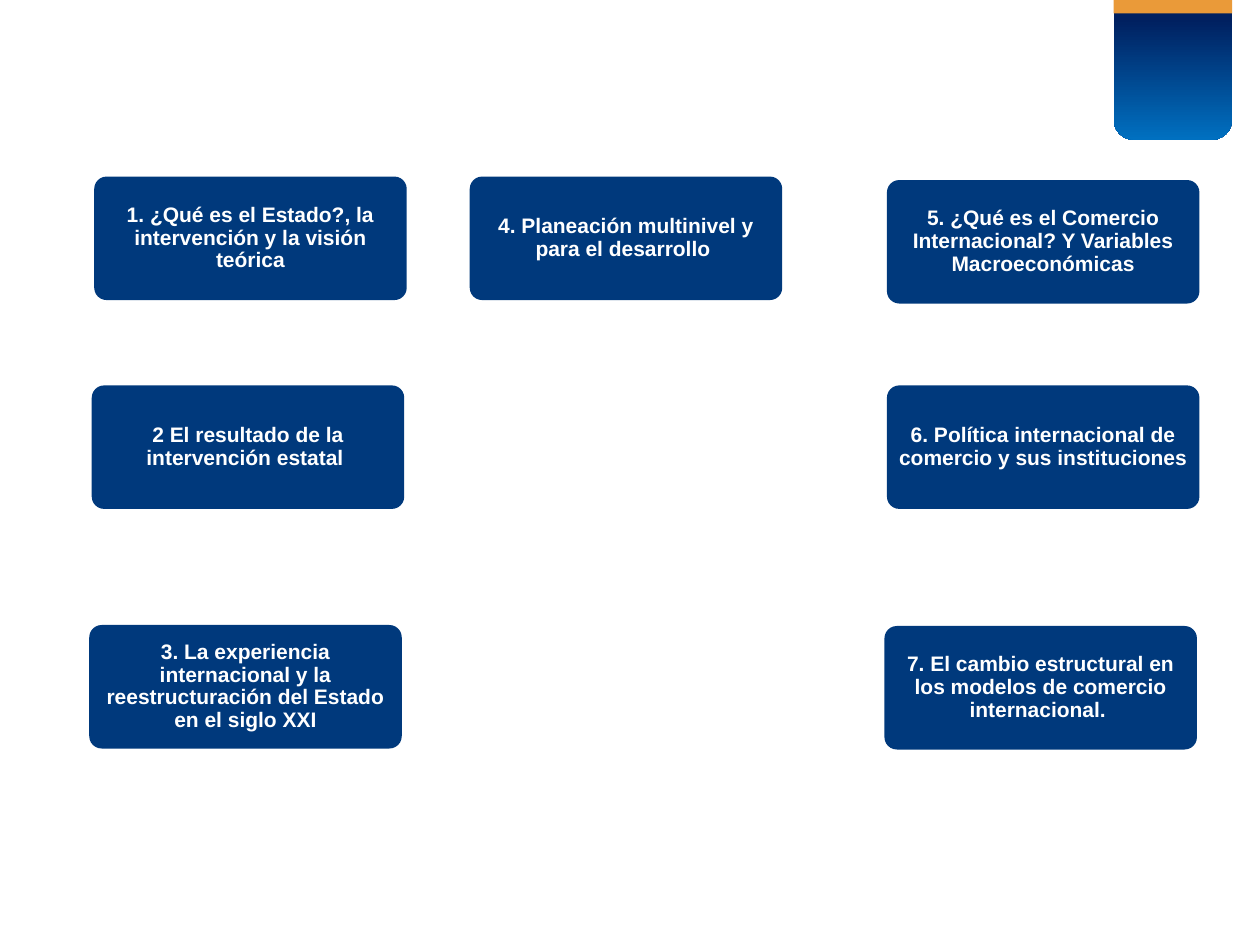
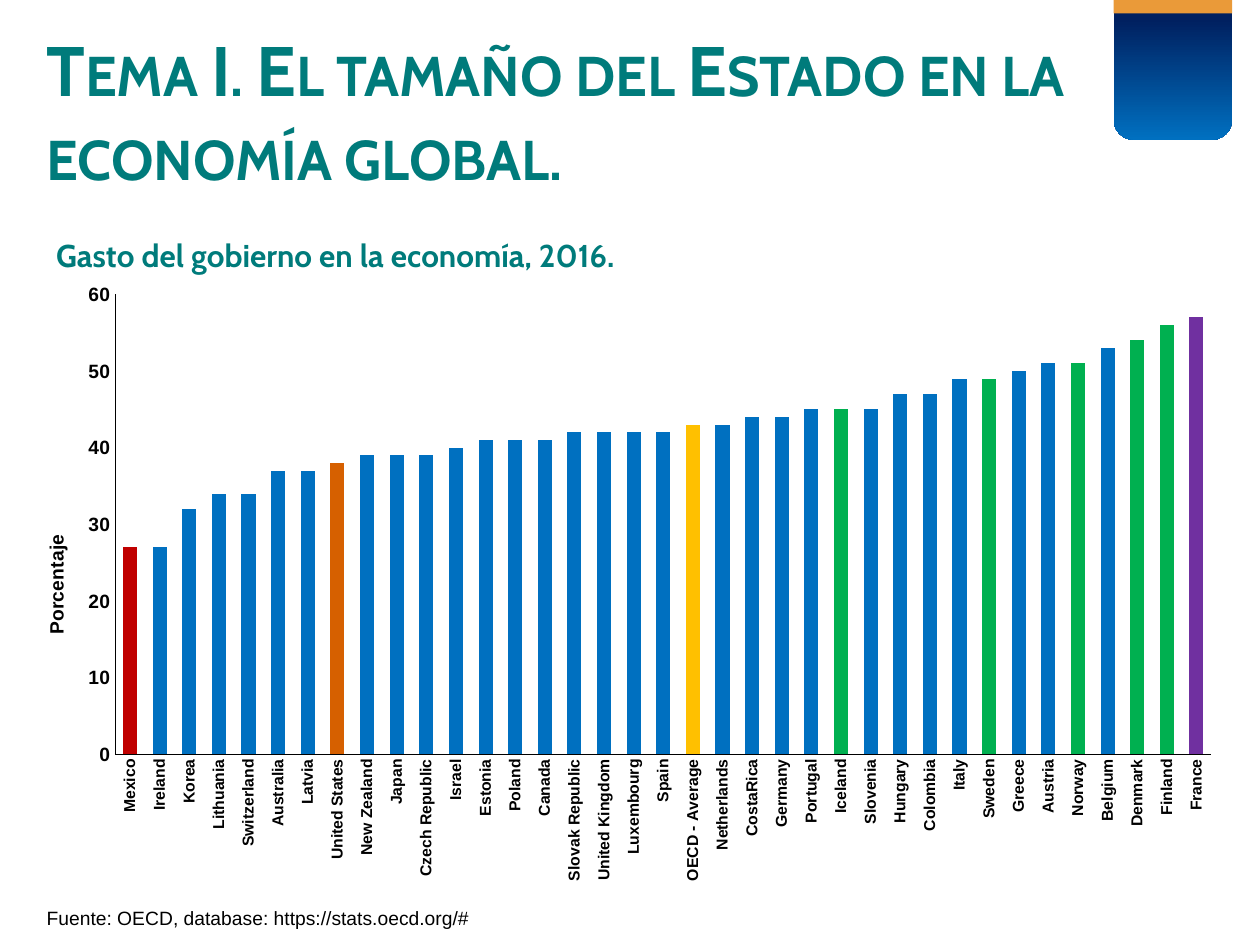
from pptx import Presentation
from pptx.chart.data import CategoryChartData
from pptx.dml.color import RGBColor
from pptx.enum.chart import XL_CHART_TYPE, XL_TICK_MARK
from pptx.enum.shapes import MSO_SHAPE
from pptx.enum.text import MSO_ANCHOR, PP_ALIGN
from pptx.oxml import parse_xml
from pptx.oxml.ns import nsdecls, qn
from pptx.util import Cm, Pt

NAVY, TEAL, BLUE, GREEN = "00397C", "007B7B", "0070C0", "00B050"
BLACK, WHITE, ORANGE, MIDNIGHT = "000000", "FFFFFF", "EA9A39", "002060"
rgb = RGBColor.from_string

CARD = {"name": "Arial", "size": Pt(12), "bold": True, "color": WHITE}
HEADING = {"name": "Cabin", "size": Pt(40), "bold": True, "color": TEAL}
CHART_TITLE = HEADING | {"size": Pt(18)}
SOURCE = {"name": "Arial", "size": Pt(11), "bold": False, "color": BLACK}
AXIS = SOURCE | {"bold": True}


def style(font, values):
    for key, value in values.items():
        if key == "color":
            font.color.rgb = rgb(value)
        else:
            setattr(font, key, value)


def set_layout(parent, index, x, y, size=None):
    """Place a chart part by fractions of the chart; a size marks the inner plot."""
    for old in parent.findall(qn("c:layout")):
        parent.remove(old)
    tags = [("xMode", "edge"), ("yMode", "edge"), ("x", x), ("y", y)]
    if size:
        tags = [("layoutTarget", "inner"), *tags, ("w", size[0]), ("h", size[1])]
    body = "".join(f'<c:{tag} val="{value}"/>' for tag, value in tags)
    parent.insert(index, parse_xml(
        f'<c:layout {nsdecls("c")}><c:manualLayout>{body}</c:manualLayout></c:layout>'))


prs = Presentation()
prs.slide_width, prs.slide_height = Cm(25.4), Cm(19.05)

# Corner band on every slide
slides = []
for _ in range(2):
    s = prs.slides.add_slide(prs.slide_layouts[6])
    tab = s.shapes.add_shape(MSO_SHAPE.ROUND_2_SAME_RECTANGLE,
                             Cm(22.45), Cm(-0.03), Cm(2.39), Cm(2.85))
    tab.adjustments[0], tab.adjustments[1] = 0, 0.17
    tab.fill.gradient()
    tab.fill.gradient_angle = 270
    for stop, (position, color) in zip(tab.fill.gradient_stops,
                                       [(0.15, MIDNIGHT), (1, BLUE)]):
        stop.position = position
        stop.color.rgb = rgb(color)
    strip = s.shapes.add_shape(MSO_SHAPE.RECTANGLE,
                               Cm(22.45), Cm(-0.03), Cm(2.39), Cm(0.3))
    strip.fill.solid()
    strip.fill.fore_color.rgb = rgb(ORANGE)
    for sp in (tab, strip):
        sp.shadow.inherit = False
        sp.line.fill.background()
    slides.append(s)
topics_slide, chart_slide = slides

# Slide 1: course topics
topics = [
    (1.9, 3.56, "1. ¿Qué es el Estado?, la intervención y la visión teórica"),
    (1.85, 7.77, "2 El resultado de la intervención estatal "),
    (1.8, 12.6, "3. La experiencia internacional y la reestructuración del Estado en el siglo XXI"),
    (9.47, 3.56, "4. Planeación multinivel y para el desarrollo "),
    (17.88, 3.63, "5. ¿Qué es el Comercio Internacional? Y Variables Macroeconómicas"),
    (17.88, 7.77, "6. Política internacional de comercio y sus instituciones "),
    (17.83, 12.62, "7. El cambio estructural en los modelos de comercio internacional. "),
]
for left, top, text in topics:
    sp = topics_slide.shapes.add_shape(MSO_SHAPE.ROUNDED_RECTANGLE,
                                       Cm(left), Cm(top), Cm(6.3), Cm(2.49))
    sp.adjustments[0] = 0.1
    sp.shadow.inherit = False
    sp.fill.solid()
    sp.fill.fore_color.rgb = rgb(NAVY)
    sp.line.fill.background()
    tf = sp.text_frame
    tf.word_wrap = True
    tf.vertical_anchor = MSO_ANCHOR.MIDDLE
    tf.margin_left = tf.margin_right = Cm(0.12)
    tf.margin_top = tf.margin_bottom = Cm(0.1)
    p = tf.paragraphs[0]
    p.alignment = PP_ALIGN.CENTER
    p.line_spacing = 0.9
    r = p.add_run()
    r.text = text
    style(r.font, CARD)

# Slide 2: government spending
spending = [
    ("Mexico", 27), ("Ireland", 27), ("Korea", 32), ("Lithuania", 34),
    ("Switzerland", 34), ("Australia", 37), ("Latvia", 37), ("United States", 38),
    ("New Zealand", 39), ("Japan", 39), ("Czech Republic", 39), ("Israel", 40),
    ("Estonia", 41), ("Poland", 41), ("Canada", 41), ("Slovak Republic", 42),
    ("United Kingdom", 42), ("Luxembourg", 42), ("Spain", 42),
    ("OECD - Average", 43), ("Netherlands", 43), ("CostaRica", 44),
    ("Germany", 44), ("Portugal", 45), ("Iceland", 45), ("Slovenia", 45),
    ("Hungary", 47), ("Colombia", 47), ("Italy", 49), ("Sweden", 49),
    ("Greece", 50), ("Austria", 51), ("Norway", 51), ("Belgium", 53),
    ("Denmark", 54), ("Finland", 56), ("France", 57),
]
nordic = ("Iceland", "Sweden", "Norway", "Denmark", "Finland")
highlights = {"Mexico": "C00000", "United States": "D66000",
              "OECD - Average": "FFC000", "France": "7030A0"}
highlights |= dict.fromkeys(nordic, GREEN)

data = CategoryChartData()
data.categories = [country for country, _ in spending]
data.add_series("Series 1", [value for _, value in spending])
chart = chart_slide.shapes.add_chart(XL_CHART_TYPE.COLUMN_CLUSTERED, Cm(0.58), Cm(4.11),
                                     Cm(24.23), Cm(14.05), data).chart
style(chart.font, SOURCE | {"size": Pt(10)})
chart.has_legend = False
plot = chart.plots[0]
plot.vary_by_categories = False
plot.gap_width, plot.overlap = 111, -20
series = plot.series[0]
series.format.fill.solid()
series.format.fill.fore_color.rgb = rgb(BLUE)
for i, (country, _) in enumerate(spending):
    if country in highlights:
        fill = series.points[i].format.fill
        fill.solid()
        fill.fore_color.rgb = rgb(highlights[country])

countries, percent = chart.category_axis, chart.value_axis
for axis, size in ((countries, 9), (percent, 11)):
    axis.has_major_gridlines = False
    axis.major_tick_mark = axis.minor_tick_mark = XL_TICK_MARK.NONE
    axis.format.line.color.rgb = rgb(BLACK)
    axis.format.line.width = Pt(0.75)
    style(axis.tick_labels.font, AXIS | {"size": Pt(size)})
percent.minimum_scale, percent.maximum_scale, percent.major_unit = 0, 60, 10

chart.has_title = percent.has_title = True
for title, text, font, x, y in (
        (chart.chart_title, "Gasto del gobierno en la economía, 2016.", CHART_TITLE, 0.018, 0.034),
        (percent.axis_title, "Porcentaje", AXIS, 0.009, 0.469)):
    r = title.text_frame.paragraphs[0].add_run()
    r.text = text
    style(r.font, font)
    set_layout(title._element, 1, x, y)
set_layout(chart._chartSpace.chart.plotArea, 0, 0.072, 0.13, (0.912, 0.66))
for body in (countries._element.txPr.find(qn("a:bodyPr")),
             percent.axis_title.text_frame._txBody.find(qn("a:bodyPr"))):
    body.set("rot", "-5400000")
    body.set("vert", "horz")

for text, font, left, top, width, height in (
        ("Tema I. El tamaño del Estado en la economía global.", HEADING, 0.69, 0.41, 21.82, 3.71),
        ("Fuente: OECD, database: https://stats.oecd.org/#", SOURCE, 0.69, 18.14, 22.05, 0.74)):
    tf = chart_slide.shapes.add_textbox(Cm(left), Cm(top), Cm(width), Cm(height)).text_frame
    tf.word_wrap = True
    r = tf.paragraphs[0].add_run()
    r.text = text
    style(r.font, font)
    if font is HEADING:
        r.font._element.set("cap", "small")

prs.save("out.pptx")
